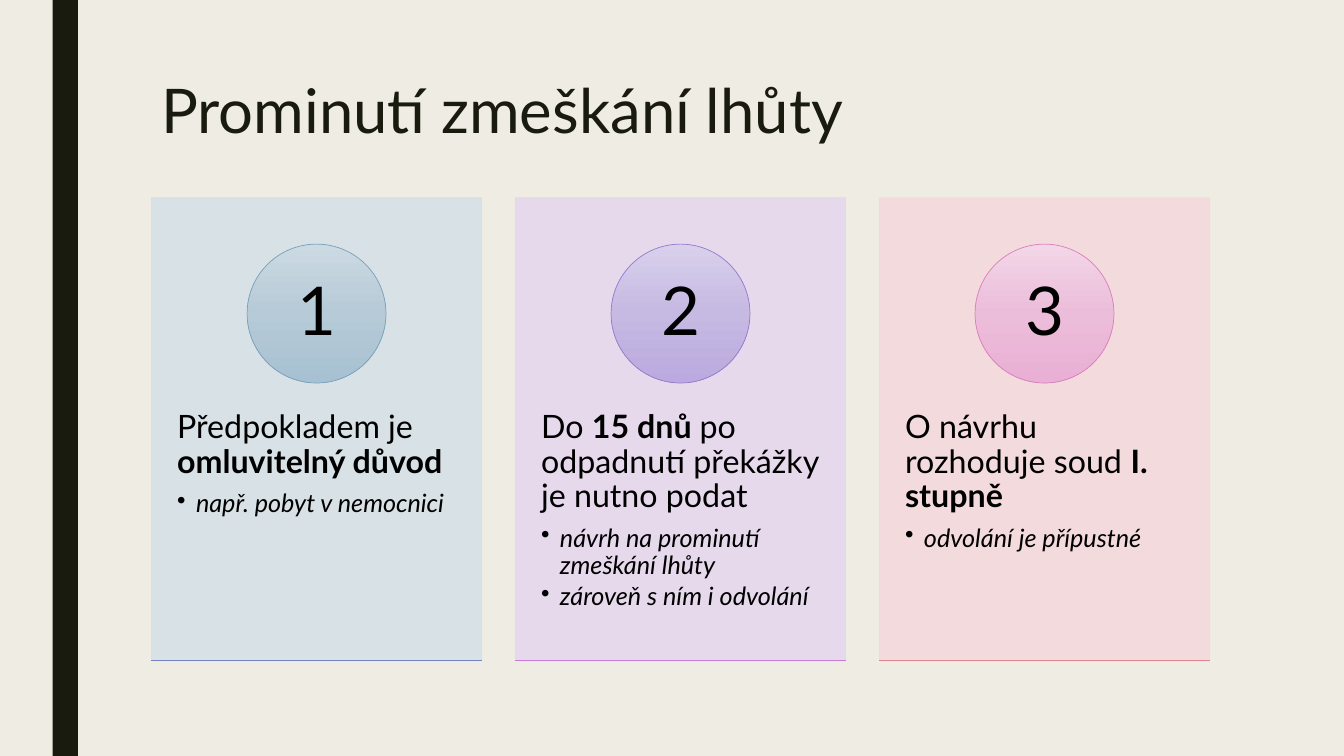
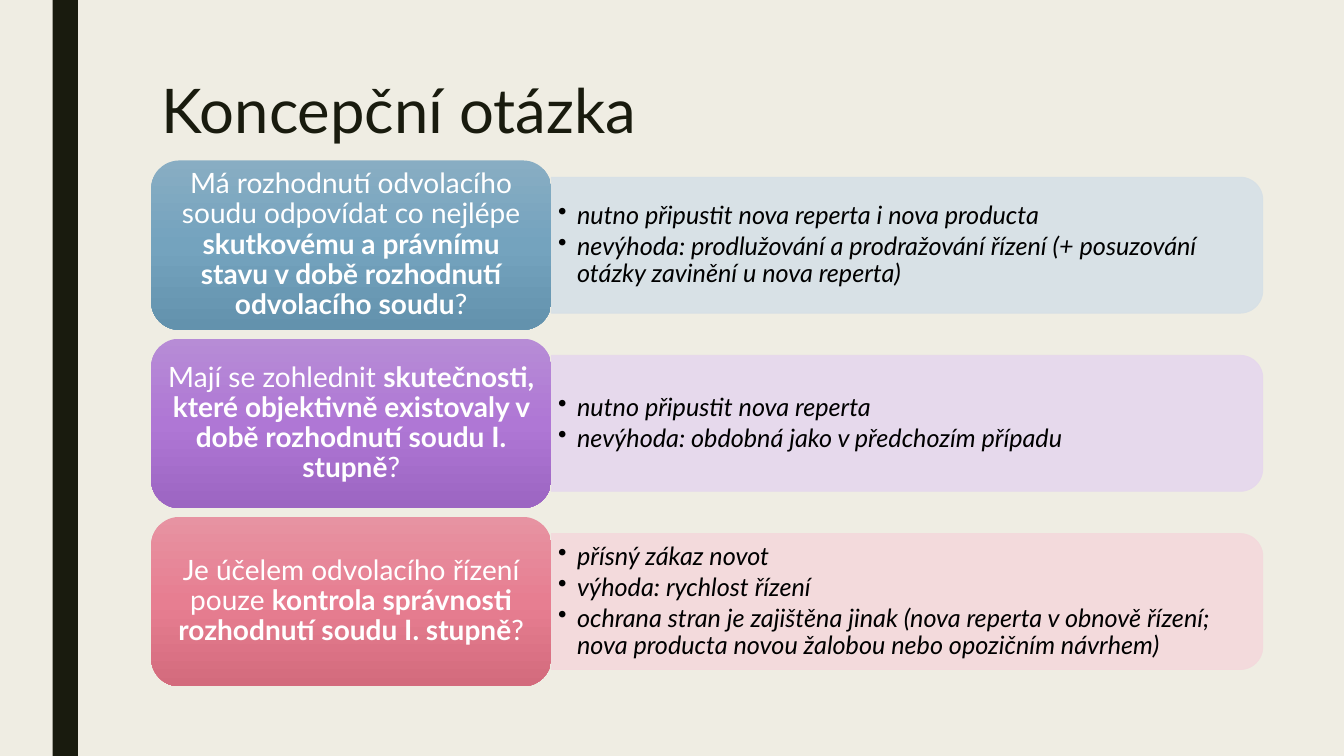
from dataclasses import dataclass

from lxml.etree import SubElement
from pptx import Presentation
from pptx.dml.color import RGBColor
from pptx.enum.shapes import MSO_CONNECTOR, MSO_SHAPE
from pptx.enum.text import MSO_ANCHOR as ANCHOR, MSO_AUTO_SIZE, PP_ALIGN as ALIGN
from pptx.oxml.ns import qn
from pptx.shapes.autoshape import Shape
from pptx.slide import Slide
from pptx.text.text import TextFrame
from pptx.util import Pt

rgb = RGBColor.from_string
FONT = "Lato"
PAPER = rgb("EFEDE3")
INK = rgb("191B0E")
BLACK = rgb("000000")
WHITE = rgb("FFFFFF")
BLUE_TINT = rgb("D6E0E7")
VIOLET_TINT = rgb("E6D7EE")
PINK_TINT = rgb("F4D9DC")

Gradient = tuple[RGBColor, RGBColor, RGBColor]
BLUE_DISC = rgb("CCDAE3"), rgb("B6CAD7"), rgb("A7C1D2")
VIOLET_DISC = rgb("D9D0EC"), rgb("C6B9E2"), rgb("BBAADF")
PINK_DISC = rgb("F3D6E8"), rgb("EBBDDA"), rgb("EAAFD5")
BLUE_BOX = rgb("88ADC3"), rgb("74A3BE"), rgb("6392AD")
VIOLET_BOX = rgb("B78CD6"), rgb("AF77D5"), rgb("9C65C2")
PINK_BOX = rgb("E793A2"), rgb("E77E91"), rgb("D36B7D")

LEFT = 108
CARD_TOP, CARD_W, CARD_H, CARD_PITCH = 141.2, 236.2, 330.8, 260
DISC_TOP, DISC_D = 174.4, 99.2
BOX_TOP, BOX_W, BOX_H, BOX_PITCH = 114.6, 285.8, 121, 127.3
PANEL_W, PANEL_H = 508.2, 97.2


@dataclass(frozen=True)
class Card:
    lead: str
    bullets: tuple[str, ...]
    tint: RGBColor
    disc: Gradient
    disc_line: RGBColor
    base_line: RGBColor


@dataclass(frozen=True)
class Question:
    text: str
    answers: tuple[str, ...]
    tint: RGBColor
    box: Gradient


CARDS = (
    Card("Předpokladem je **omluvitelný důvod**", ("např. pobyt v nemocnici",),
         BLUE_TINT, BLUE_DISC, rgb("77A2BB"), rgb("7883C4")),
    Card("Do **15 dnů **po odpadnutí překážky je nutno podat",
         ("návrh na prominutí zmeškání lhůty", "zároveň s ním i odvolání"),
         VIOLET_TINT, VIOLET_DISC, rgb("977ACC"), rgb("C67CD4")),
    Card("O návrhu rozhoduje soud **I. stupně**", ("odvolání je přípustné",),
         PINK_TINT, PINK_DISC, rgb("DB7FBD"), rgb("E28394")),
)

QUESTIONS = (
    Question("Má rozhodnutí odvolacího soudu odpovídat co nejlépe **skutkovému a právnímu "
             "stavu v době rozhodnutí odvolacího soudu**?",
             ("nutno připustit nova reperta i nova producta",
              "nevýhoda: prodlužování a prodražování řízení "
              "(+ posuzování otázky zavinění u nova reperta)"),
             BLUE_TINT, BLUE_BOX),
    Question("Mají se zohlednit **skutečnosti, které objektivně existovaly v době "
             "rozhodnutí soudu I. stupně**?",
             ("nutno připustit nova reperta",
              "nevýhoda: obdobná jako v předchozím případu"),
             VIOLET_TINT, VIOLET_BOX),
    Question("Je účelem odvolacího řízení pouze **kontrola správnosti rozhodnutí "
             "soudu I. stupně**?",
             ("přísný zákaz novot", "výhoda: rychlost řízení",
              "ochrana stran je zajištěna jinak (nova reperta v obnově řízení; "
              "nova producta novou žalobou nebo opozičním návrhem)"),
             PINK_TINT, PINK_BOX),
)


def set_frame(tf: TextFrame, anchor: ANCHOR, x: float = 0, top: float = 0,
              bottom: float = 0) -> None:
    tf.word_wrap = True
    tf.auto_size = MSO_AUTO_SIZE.NONE
    tf.vertical_anchor = anchor
    tf.margin_left = tf.margin_right = Pt(x)
    tf.margin_top, tf.margin_bottom = Pt(top), Pt(bottom)


def write(tf: TextFrame, text: str, *, size: float, color: RGBColor = BLACK,
          align: ALIGN = ALIGN.LEFT, spacing: float = 0.9, after: float = 0,
          italic: bool = False, bullet: bool = False) -> None:
    """Add a paragraph; text between ** marks is bold."""
    p = tf.paragraphs[0] if not tf.text else tf.add_paragraph()
    p.alignment, p.line_spacing, p.space_after = align, spacing, Pt(after)
    p.space_before = Pt(0)
    if bullet:
        pPr = p._p.get_or_add_pPr()
        pPr.set("marL", str(Pt(13.5)))
        pPr.set("indent", str(-Pt(13.5)))
        SubElement(pPr, qn("a:buChar")).set("char", "•")
    for i, part in enumerate(text.split("**")):
        if part:
            r = p.add_run()
            r.text = part
            r.font.name, r.font.size = FONT, Pt(size)
            r.font.bold, r.font.italic = i % 2 == 1, italic
            r.font.color.rgb = color


def write_bullets(tf: TextFrame, bullets: tuple[str, ...]) -> None:
    for text in bullets:
        write(tf, text, size=18, after=2.7, italic=True, bullet=True)


def add_shape(s: Slide, kind: MSO_SHAPE, x: float, y: float, w: float, h: float,
              fill: RGBColor | Gradient, line: RGBColor | None = None,
              opacity: int = 100) -> Shape:
    """Draw a shape with a solid fill, or a top-to-bottom gradient of three colours."""
    sp = s.shapes.add_shape(kind, Pt(x), Pt(y), Pt(w), Pt(h))
    sp.shadow.inherit = False
    if isinstance(fill, RGBColor):
        sp.fill.solid()
        sp.fill.fore_color.rgb = fill
    else:
        sp.fill.gradient()
        sp.fill.gradient_angle = 270
        stops = sp._element.spPr.find(qn("a:gradFill")).find(qn("a:gsLst"))
        for stop in list(stops):
            stops.remove(stop)
        for pos, color in zip((0, 50000, 100000), fill):
            stop = SubElement(stops, qn("a:gs"), pos=str(pos))
            SubElement(stop, qn("a:srgbClr"), val=str(color))
    if line is None:
        sp.line.fill.background()
    else:
        sp.line.color.rgb = line
        sp.line.width = Pt(0.5)
    if opacity < 100:
        for color in sp._element.spPr.iter(qn("a:srgbClr")):
            SubElement(color, qn("a:alpha"), val=str(opacity * 1000))
    return sp


def add_rule(s: Slide, x: float, y: float, w: float, color: RGBColor) -> None:
    rule = s.shapes.add_connector(MSO_CONNECTOR.STRAIGHT, Pt(x), Pt(y), Pt(x + w), Pt(y))
    rule.line.color.rgb = color
    rule.line.width = Pt(0.5)
    SubElement(rule._element.spPr, qn("a:effectLst"))


def add_titled_slide(prs: Presentation, title: str) -> Slide:
    s = prs.slides.add_slide(prs.slide_layouts[5])
    add_shape(s, MSO_SHAPE.RECTANGLE, 37.6, 0, 18, 540, INK)
    sp = s.shapes.title
    sp.left, sp.top, sp.width, sp.height = Pt(LEFT), Pt(54), Pt(756), Pt(116.6)
    set_frame(sp.text_frame, ANCHOR.TOP, 7.2, 3.6, 3.6)
    write(sp.text_frame, title, size=44, color=INK, spacing=0.89)
    return s


def add_card(s: Slide, index: int, card: Card) -> None:
    x = LEFT + index * CARD_PITCH
    sp = add_shape(s, MSO_SHAPE.RECTANGLE, x, CARD_TOP, CARD_W, CARD_H,
                   card.tint, card.tint, opacity=90)
    set_frame(sp.text_frame, ANCHOR.TOP, 18.5, 152)
    write(sp.text_frame, card.lead, size=23, after=8)
    write_bullets(sp.text_frame, card.bullets)
    disc = add_shape(s, MSO_SHAPE.OVAL, x + (CARD_W - DISC_D) / 2, DISC_TOP,
                     DISC_D, DISC_D, card.disc, card.disc_line)
    set_frame(disc.text_frame, ANCHOR.MIDDLE)
    write(disc.text_frame, str(index + 1), size=48, align=ALIGN.CENTER, after=16.8)
    add_rule(s, x, CARD_TOP + CARD_H, CARD_W, card.base_line)


def add_question(s: Slide, index: int, question: Question) -> None:
    y = BOX_TOP + index * BOX_PITCH
    x = LEFT + BOX_W
    middle = y + BOX_H / 2
    panel = add_shape(s, MSO_SHAPE.ROUND_2_SAME_RECTANGLE,
                      x + (PANEL_W - PANEL_H) / 2, middle - PANEL_W / 2,
                      PANEL_H, PANEL_W, question.tint, question.tint, opacity=90)
    panel.rotation = 90
    answers = s.shapes.add_textbox(Pt(x), Pt(middle - PANEL_H / 2),
                                   Pt(PANEL_W - 5), Pt(PANEL_H))
    set_frame(answers.text_frame, ANCHOR.MIDDLE, 5, 2.7, 2.7)
    write_bullets(answers.text_frame, question.answers)
    box = add_shape(s, MSO_SHAPE.ROUNDED_RECTANGLE, LEFT, y, BOX_W, BOX_H, question.box)
    set_frame(box.text_frame, ANCHOR.MIDDLE, 5.5, 2.8, 2.8)
    write(box.text_frame, question.text, size=20, color=WHITE, align=ALIGN.CENTER, after=7)


def main() -> None:
    prs = Presentation()
    prs.slide_width, prs.slide_height = Pt(960), Pt(540)
    background = prs.slide_master.background.fill
    background.solid()
    background.fore_color.rgb = PAPER

    s = add_titled_slide(prs, "Prominutí zmeškání lhůty")
    for i, card in enumerate(CARDS):
        add_card(s, i, card)

    s = add_titled_slide(prs, "Koncepční otázka")
    for i, question in enumerate(QUESTIONS):
        add_question(s, i, question)

    prs.save("out.pptx")


if __name__ == "__main__":
    main()
